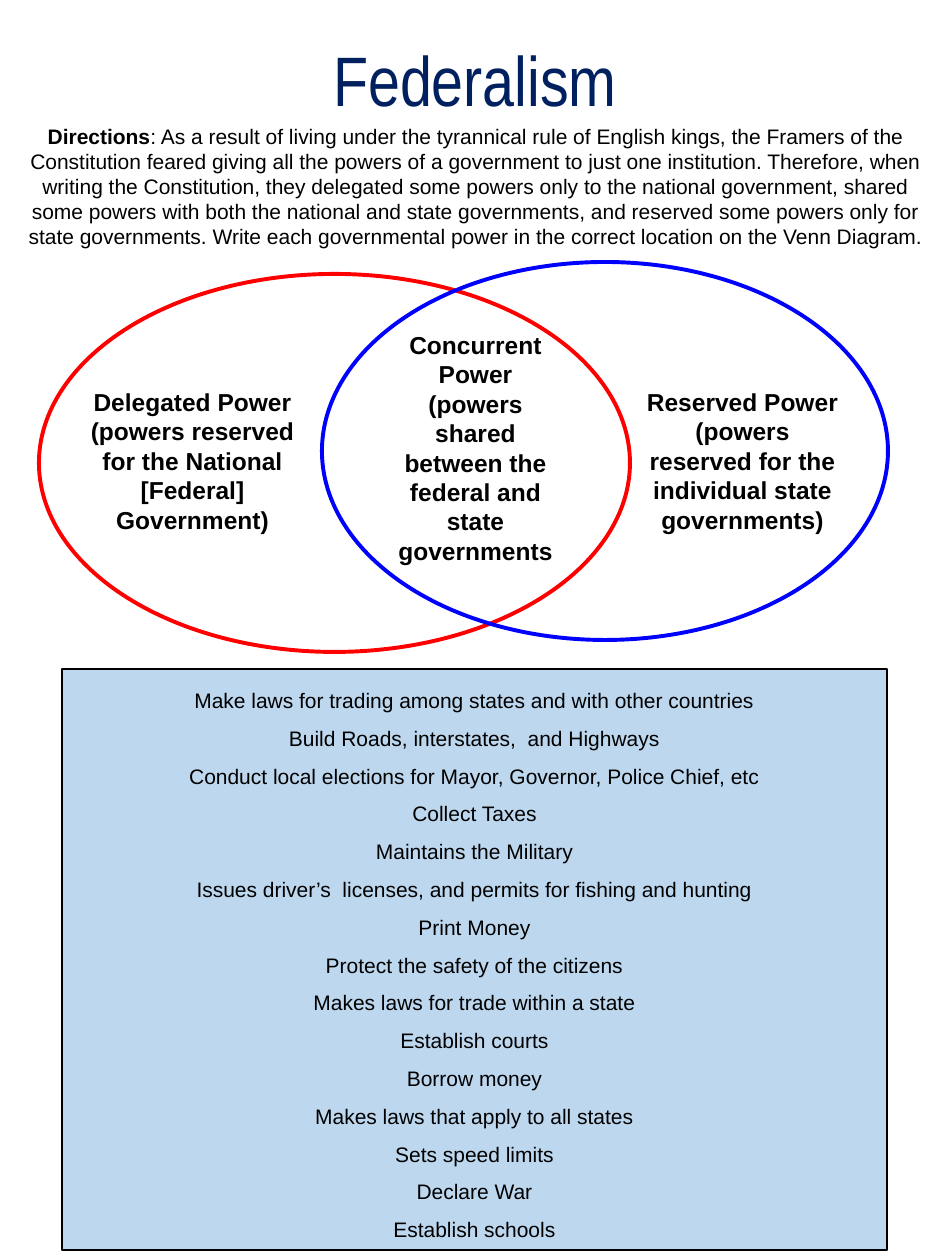
from dataclasses import dataclass
from typing import Optional

from pptx import Presentation
from pptx.dml.color import RGBColor
from pptx.enum.shapes import MSO_SHAPE
from pptx.enum.text import MSO_ANCHOR, MSO_AUTO_SIZE, PP_ALIGN
from pptx.util import Emu, Pt

PX = 914400 / 126  # EMU in one px


@dataclass
class Area:
    left: int
    top: int
    width: int
    height: int

    def emu(self) -> list[Emu]:
        return [px(n) for n in (self.left, self.top, self.width, self.height)]


@dataclass
class Span:
    text: str
    bold: bool = False


@dataclass
class Style:
    size: int
    font: str = "Arial"
    color: str = "000000"
    line_spacing: Optional[float] = None


@dataclass
class Circle:
    area: Area
    color: str


@dataclass
class Label:
    area: Area
    lines: list[str]


def px(length: int) -> Emu:
    return Emu(round(length * PX))


def rgb(color: str) -> RGBColor:
    return RGBColor.from_string(color)


def write(frame, paragraphs: list[list[Span]], style: Style, inset: int = 13,
          anchor=MSO_ANCHOR.TOP) -> None:
    frame.word_wrap = True
    frame.vertical_anchor = anchor
    frame.margin_left = frame.margin_right = px(13)
    frame.margin_top = frame.margin_bottom = px(inset)
    for index, spans in enumerate(paragraphs):
        para = frame.add_paragraph() if index else frame.paragraphs[0]
        para.alignment = PP_ALIGN.CENTER
        if style.line_spacing:
            para.line_spacing = style.line_spacing
        for span in spans:
            run = para.add_run()
            run.text = span.text
            run.font.name = style.font
            run.font.size = Pt(style.size)
            run.font.bold = span.bold
            run.font.color.rgb = rgb(style.color)


def add_text(page, area: Area, paragraphs: list[list[Span]], style: Style, inset: int = 13,
             anchor=MSO_ANCHOR.TOP) -> None:
    write(page.shapes.add_textbox(*area.emu()).text_frame, paragraphs, style, inset, anchor)


def add_outline(page, kind, area: Area, line: str, width: float, fill: Optional[str] = None):
    shape = page.shapes.add_shape(kind, *area.emu())
    shape.shadow.inherit = False
    if fill:
        shape.fill.solid()
        shape.fill.fore_color.rgb = rgb(fill)
    else:
        shape.fill.background()
    shape.line.color.rgb = rgb(line)
    shape.line.width = Pt(width)
    return shape


TITLE = Style(40, "Arial Narrow", "002060")
BODY = Style(12)
LABEL = Style(14)
POWER = Style(12, line_spacing=1.5)

DIRECTIONS = [
    Span("Directions", bold=True),
    Span(": As a result of living under the tyrannical rule of English kings, the Framers of the "
         "Constitution feared giving all the powers of a government to just one institution. "
         "Therefore, when writing the Constitution, they delegated some powers only to the "
         "national government, shared some powers with both the national and state governments, "
         "and reserved some powers only for state governments. Write each governmental power in "
         "the correct location on the Venn Diagram."),
]

POWERS = [
    "Make laws for trading among states and with other countries",
    "Build Roads, interstates,  and Highways",
    "Conduct local elections for Mayor, Governor, Police Chief, etc",
    "Collect Taxes",
    "Maintains the Military",
    "Issues driver’s  licenses, and permits for fishing and hunting",
    "Print Money",
    "Protect the safety of the citizens",
    "Makes laws for trade within a state",
    "Establish courts",
    "Borrow money",
    "Makes laws that apply to all states",
    "Sets speed limits",
    "Declare War",
    "Establish schools",
]

CIRCLES = [
    Circle(Area(39, 274, 591, 378), "FF0000"),
    Circle(Area(322, 262, 566, 378), "0000FF"),
]

LABELS = [
    Label(Area(63, 374, 259, 168),
          ["Delegated Power", "(powers reserved for the National [Federal] Government)"]),
    Label(Area(384, 317, 183, 262),
          ["Concurrent Power (powers shared between the federal and state governments"]),
    Label(Area(630, 374, 225, 168),
          ["Reserved Power (powers reserved for the individual state governments)"]),
]


def main() -> None:
    deck = Presentation()
    deck.slide_width, deck.slide_height = px(945), px(1260)
    page = deck.slides.add_slide(deck.slide_layouts[6])

    # List of powers to sort
    bank = add_outline(page, MSO_SHAPE.RECTANGLE, Area(62, 669, 825, 581), "000000", 0.75, "BDD7EE")
    write(bank.text_frame, [[Span(power)] for power in POWERS], POWER, inset=6)
    bank.text_frame.auto_size = MSO_AUTO_SIZE.SHAPE_TO_FIT_TEXT

    # Title and directions
    add_text(page, Area(53, 30, 844, 72), [[Span("Federalism")]], TITLE, inset=6)
    add_text(page, Area(13, 115, 926, 142), [DIRECTIONS], BODY, anchor=MSO_ANCHOR.MIDDLE)

    # Venn diagram
    for circle in CIRCLES:
        add_outline(page, MSO_SHAPE.OVAL, circle.area, circle.color, 2.25)
    for label in LABELS:
        add_text(page, label.area, [[Span(line, bold=True)] for line in label.lines], LABEL)

    deck.save("out.pptx")


if __name__ == "__main__":
    main()
